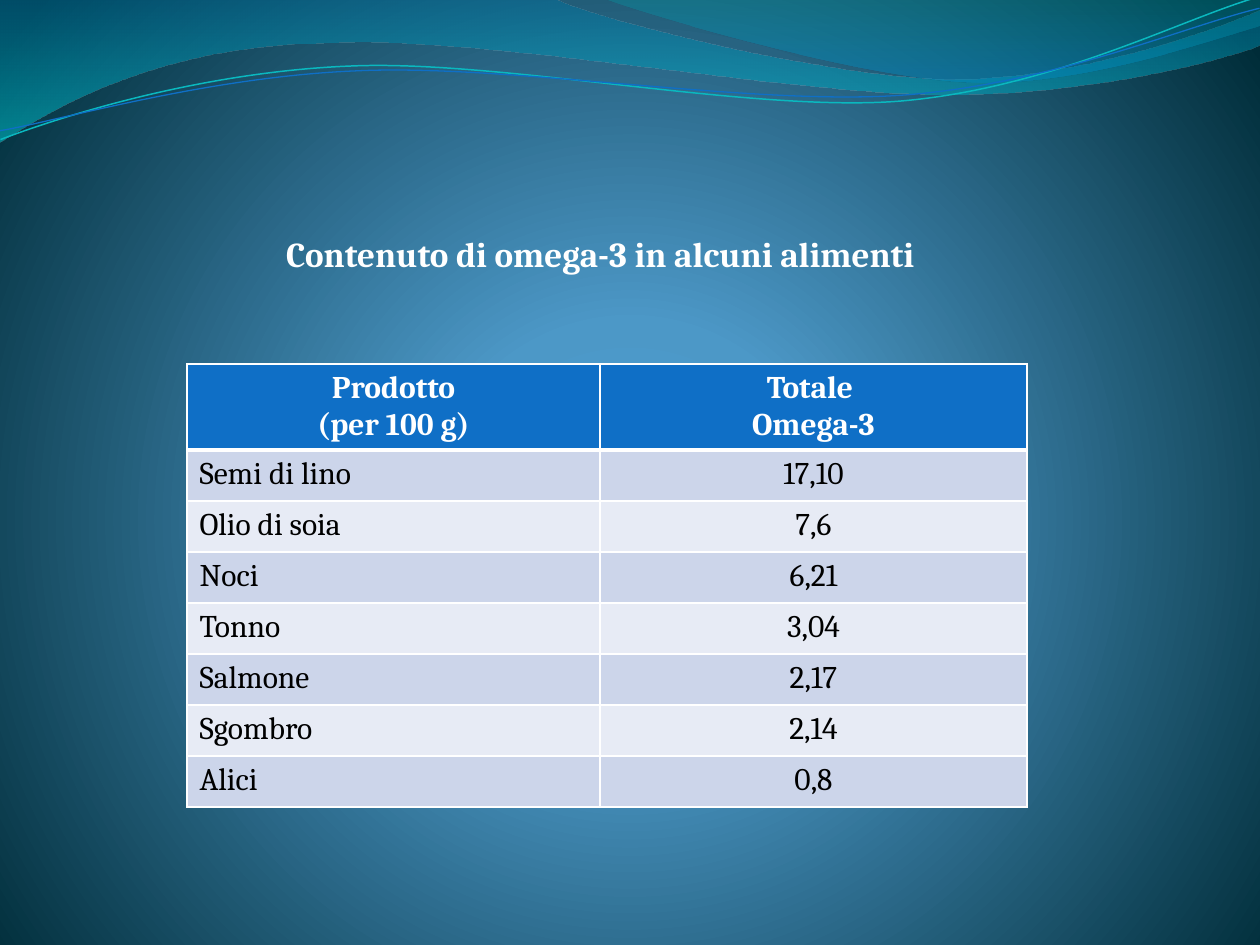
from math import cos, radians, sin

from lxml import etree
from pptx import Presentation, util as u
from pptx.dml.color import RGBColor
from pptx.enum import text
from pptx.oxml.ns import qn

PX = 914400 // 126
FONT = "Cambria"
WHITE, BLACK, BLUE = "FFFFFF", "000000", "0F6FC6"
BANDS = ("CCD5EA", "E7EBF5")

TITLE = "Contenuto di omega-3 in alcuni alimenti"
HEAD = ("Prodotto\n(per 100 g)", "Totale \nOmega-3")
FOODS = [
    ("Semi di lino", "17,10"),
    ("Olio di soia", "7,6"),
    ("Noci", "6,21"),
    ("Tonno", "3,04"),
    ("Salmone", "2,17"),
    ("Sgombro", "2,14"),
    ("Alici", "0,8"),
]
COLS = (413, 427)
HEAD_H, ROW_H = 86, 51
EDGES = (("a:lnL", 1), ("a:lnR", 1), ("a:lnT", 1), ("a:lnB", 3))

# Gradient stops: position, colour, opacity (percent)
BACK = [(0, "4AA0D6", 100), (25, "4C98C7", 100), (100, "002C38", 100)]
# Outlines: a start point, then segments of one point (line) or three (curve)
WAVES = [
    ([(0, "0074A1", 45), (100, "00C6CF", 55)],
     [[(0, 0)], [(554, -1)],
      [(600, 21), (837, 79), (955, 79)], [(1075, 79), (1207, 33), (1260, 11)],
      [(1261, 45)], [(1239, 55), (1096, 96), (940, 94)],
      [(784, 94), (481, 35), (324, 43)], [(163, 45), (58, 105), (-1, 142)]]),
    ([(0, "00A1A9", 30), (80, "008BBF", 45)],
     [[(604, -1)], [(642, 14), (859, 78), (969, 82)],
      [(1079, 87), (1211, 40), (1260, 26)], [(1260, 0)]]),
]
TILT, HUB = -2.7, (629, 73)
LINES = [
    ("0AB8BF", 0.85,
     [[(0, 140)], [(60, 117), (199, 72), (349, 66)],
      [(498, 59), (747, 112), (898, 101)], [(1050, 89), (1182, 19), (1257, -3)]]),
    (BLUE, 0.75,
     [[(0, 131)], [(59, 121), (207, 77), (357, 71)],
      [(508, 64), (752, 106), (903, 95)], [(1053, 84), (1186, 26), (1260, 8)]]),
]


def rgb(color):
    return RGBColor.from_string(color)


def write(frame, words, size=18, color=BLACK, bold=False, center=True):
    frame.text = words
    for para in frame.paragraphs:
        para.alignment = text.PP_ALIGN.CENTER if center else text.PP_ALIGN.LEFT
        for run in para.runs:
            font = run.font
            font.name, font.size, font.bold = FONT, u.Pt(size), bold
            font.color.rgb = rgb(color)


def grade(fill, parent, stops, radial=False):
    """Swap a solid fill for a gradient with opacity."""
    fill.solid()
    old = parent.find(qn("a:solidFill"))
    grad = etree.Element(qn("a:gradFill"), rotWithShape="1")
    items = etree.SubElement(grad, qn("a:gsLst"))
    for pos, color, alpha in stops:
        stop = etree.SubElement(items, qn("a:gs"), pos=str(pos * 1000))
        tone = etree.SubElement(stop, qn("a:srgbClr"), val=color)
        if alpha < 100:
            etree.SubElement(tone, qn("a:alpha"), val=str(alpha * 1000))
    if radial:
        way = etree.SubElement(grad, qn("a:path"), path="circle")
        etree.SubElement(way, qn("a:fillToRect"),
                         l="10000", t="110000", r="10000", b="100000")
    else:
        etree.SubElement(grad, qn("a:lin"), ang="5400000", scaled="0")
    parent.replace(old, grad)


def turn(point, angle):
    """Rotate a point about the hub."""
    x, y = point[0] - HUB[0], point[1] - HUB[1]
    c, s = cos(radians(angle)), sin(radians(angle))
    return HUB[0] + x * c - y * s, HUB[1] + x * s + y * c


def draw(slide, segs, close=False, tilt=0):
    pts = [turn(p, -tilt) for seg in segs for p in seg]
    pen = slide.shapes.build_freeform(*pts[0], scale=PX)
    pen.add_line_segments(pts[1:], close=close)
    shape = pen.convert_to_shape()
    shape.shadow.inherit = False
    shape.rotation = tilt % 360
    # Join each three-point segment into one Bezier curve
    steps = iter(list(shape._element.spPr.iter(qn("a:lnTo"))))
    for seg in segs[1:]:
        group = [next(steps) for _ in seg]
        if len(seg) == 3:
            curve = etree.Element(qn("a:cubicBezTo"))
            group[0].addprevious(curve)
            for step in group:
                curve.append(step[0])
                step.getparent().remove(step)
    return shape


def rule(cell):
    """Give a heading cell its white borders."""
    props = cell._tc.get_or_add_tcPr()
    for i, (tag, width) in enumerate(EDGES):
        edge = etree.Element(qn(tag), w=str(u.Pt(width)))
        paint = etree.SubElement(edge, qn("a:solidFill"))
        etree.SubElement(paint, qn("a:srgbClr"), val=WHITE)
        props.insert(i, edge)


def main():
    prs = Presentation()
    prs.slide_width, prs.slide_height = u.Inches(10), u.Inches(7.5)
    slide = prs.slides.add_slide(prs.slide_layouts[5])

    # Background
    back = slide.background.fill
    back.solid()
    grade(back, slide._element.cSld.bg.bgPr, BACK, radial=True)

    # Waves and lines along the top
    for stops, segs in WAVES:
        wave = draw(slide, segs, close=True)
        wave.line.fill.background()
        grade(wave.fill, wave._element.spPr, stops)
    for color, width, segs in LINES:
        curve = draw(slide, segs, tilt=TILT)
        curve.fill.background()
        curve.line.color.rgb = rgb(color)
        curve.line.width = u.Pt(width)

    # Title
    title = slide.shapes.title
    title.left, title.top, title.width, title.height = (
        n * PX for n in (256, 226, 689, 55))
    write(title.text_frame, TITLE, size=20, color=WHITE, bold=True)

    # Table
    rows = [HEAD] + FOODS
    high = HEAD_H + ROW_H * len(FOODS)
    table = slide.shapes.add_table(
        len(rows), len(COLS), 187 * PX, 364 * PX, sum(COLS) * PX, high * PX).table
    for col, width in zip(table.columns, COLS):
        col.width = width * PX
    for r, row in enumerate(rows):
        head = r == 0
        table.rows[r].height = (HEAD_H if head else ROW_H) * PX
        for c, words in enumerate(row):
            cell = table.cell(r, c)
            cell.fill.solid()
            cell.fill.fore_color.rgb = rgb(BLUE if head else BANDS[(r - 1) % 2])
            write(cell.text_frame, words, color=WHITE if head else BLACK,
                  bold=head, center=head or c > 0)
            if head:
                rule(cell)

    prs.save("out.pptx")


if __name__ == "__main__":
    main()
